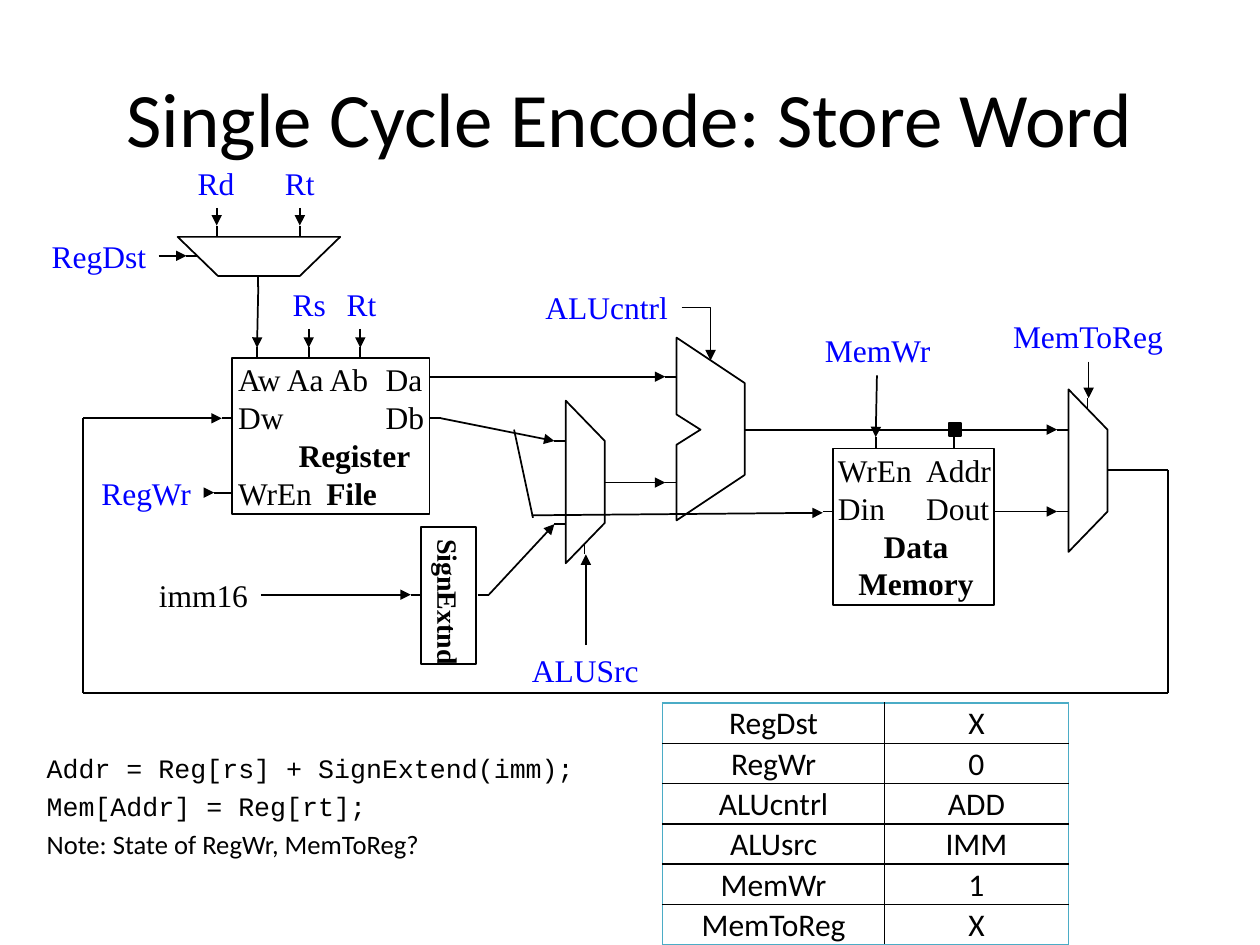
from dataclasses import dataclass
from itertools import pairwise

from pptx import Presentation
from pptx.dml.color import RGBColor
from pptx.enum.shapes import MSO_CONNECTOR, MSO_SHAPE
from pptx.enum.text import MSO_ANCHOR, MSO_AUTO_SIZE, PP_ALIGN
from pptx.oxml.ns import qn
from pptx.slide import Slide
from pptx.util import Cm, Pt
from lxml import etree

BLACK = RGBColor(0x00, 0x00, 0x00)
WHITE = RGBColor(0xFF, 0xFF, 0xFF)
BLUE = RGBColor(0x00, 0x00, 0xFF)
TEAL = RGBColor(0x4B, 0xAC, 0xC6)
SERIF, SANS, MONO = "Times New Roman", "Calibri", "Courier New"
CENTER, LEFT = PP_ALIGN.CENTER, PP_ALIGN.LEFT
MIDDLE, BOTTOM = MSO_ANCHOR.MIDDLE, MSO_ANCHOR.BOTTOM
RECT = MSO_SHAPE.RECTANGLE
STRAIGHT, ELBOW = MSO_CONNECTOR.STRAIGHT, MSO_CONNECTOR.ELBOW
UNIT = 2.54
PIN = 0.09


@dataclass
class Label:
    text: str
    x: float
    y: float
    wide: float
    color: RGBColor = BLUE


@dataclass
class Mux:
    x: float
    y: float
    upright: bool


@dataclass
class Line:
    text: str
    bold: bool = False
    tab: float = 0
    indent: float = 0
    align: PP_ALIGN = LEFT


@dataclass
class Box:
    x: float
    y: float
    wide: float
    high: float
    inset: float
    lines: list[Line]


@dataclass
class Wire:
    points: list[tuple[float, float]]
    tip: bool = True


LABELS = [
    Label("Rd", 1.47, 1.25, 0.49), Label("Rt", 2.16, 1.25, 0.44),
    Label("RegDst", 0.31, 1.83, 0.95), Label("Rs", 2.22, 2.21, 0.47),
    Label("Rt", 2.65, 2.21, 0.44), Label("ALUcntrl", 4.23, 2.24, 1.17),
    Label("MemWr", 6.44, 2.58, 1.05), Label("MemToReg", 7.93, 2.47, 1.41),
    Label("RegWr", 0.7, 3.71, 0.92), Label("ALUSrc", 4.12, 5.12, 1.05),
    Label("imm16", 1.16, 4.52, 0.91, BLACK),
]
MUXES = [Mux(4.49, 3.18, True), Mux(8.48, 3.09, True), Mux(1.41, 1.88, False)]
TAPER = [(0, 0), (0.32, 0.31), (0.97, 0.31), (1.29, 0)]
ALU = [(5.37, 2.68), (5.91, 3.04), (5.91, 3.77), (5.37, 4.13),
       (5.37, 3.53), (5.56, 3.41), (5.37, 3.29)]
BOXES = [
    Box(1.84, 2.84, 1.57, 1.24, 0.05, [
        Line("Aw Aa Ab\tDa", tab=1.17), Line("Dw\tDb", tab=1.17),
        Line("Register", bold=True, indent=0.48), Line("WrEn\t|File", tab=0.7)]),
    Box(6.61, 3.56, 1.28, 1.24, 0.04, [
        Line("WrEn\tAddr", tab=0.7), Line("Din\tDout", tab=0.7),
        Line("Data", bold=True, align=CENTER), Line("Memory", bold=True, align=CENTER)]),
]
ACROSS = [(5.91, 3.41), (5.28, 2.99), (5.28, 3.83), (4.8, 3.83), (4.4, 3.5),
          (4.4, 4.16), (8.79, 3.73), (8.39, 4.06), (8.39, 3.41), (1.48, 2.03),
          (3.26, 4.72), (3.79, 4.72), (7.89, 4.06), (6.53, 4.06), (1.76, 3.32),
          (3.41, 3.32), (3.41, 2.99)]
DOWN = [(4.64, 4.31), (8.63, 3.16), (2.05, 2.19), (2.38, 1.79), (1.72, 1.79),
        (6.95, 3.47), (7.57, 3.47), (2.04, 2.75), (2.45, 2.75), (2.86, 2.75)]
WIRES = [
    Wire([(8.88, 3.73), (9.27, 3.73), (9.27, 5.5), (0.66, 5.5), (0.66, 3.32), (1.76, 3.32)]),
    Wire([(3.88, 4.72), (4.4, 4.16)]), Wire([(4.89, 3.83), (5.28, 3.83)]),
    Wire([(2.07, 4.72), (3.26, 4.72)]), Wire([(3.5, 3.32), (4.4, 3.5)]),
    Wire([(6, 3.41), (7.53, 3.41)], False), Wire([(7.62, 3.41), (8.39, 3.41)]),
    Wire([(2.05, 2.27), (2.04, 2.76)]), Wire([(2.45, 2.61), (2.45, 2.76)]),
    Wire([(2.86, 2.61), (2.86, 2.76)]), Wire([(3.5, 2.99), (5.28, 2.99)]),
    Wire([(7.98, 4.06), (8.39, 4.06)]), Wire([(4.65, 5.12), (4.65, 4.4)]),
    Wire([(1.26, 2.03), (1.48, 2.03)]), Wire([(1.72, 1.65), (1.72, 1.79)]),
    Wire([(2.38, 1.65), (2.38, 1.79)]), Wire([(1.62, 3.91), (1.7, 3.91)]),
    Wire([(1.7, 3.91), (1.84, 3.91)], False), Wire([(6.96, 2.98), (6.95, 3.47)]),
    Wire([(8.64, 2.87), (8.64, 3.16)]), Wire([(4.08, 3.41), (4.23, 4.11)], False),
    Wire([(4.22, 4.09), (6.53, 4.07)]),
]
ROWS = [("RegDst", "X"), ("RegWr", "0"), ("ALUcntrl", "ADD"),
        ("ALUsrc", "IMM"), ("MemWr", "1"), ("MemToReg", "X")]
NOTES = [("Addr = Reg[rs] + SignExtend(imm);", MONO), ("Mem[Addr] = Reg[rt];", MONO),
         ("Note: State of RegWr, MemToReg?", SANS)]


def cm(size: float) -> Cm:
    return Cm(size * UNIT)


def write(para, text: str, *, font=SERIF, size=18.0, color=BLACK, bold=False, align=CENTER):
    para.alignment = align
    run = para.add_run()
    run.text = text
    run.font.name, run.font.size, run.font.bold = font, Pt(size), bold
    run.font.color.rgb = color


def place(shape, x: float, y: float, wide: float, high: float):
    shape.left, shape.top, shape.width, shape.height = map(cm, (x, y, wide, high))


def paint(shape, fill=WHITE):
    shape.shadow.inherit = False
    shape.fill.solid()
    shape.fill.fore_color.rgb = fill
    shape.line.color.rgb = BLACK
    shape.line.width = Pt(1)


def block(slide: Slide, x: float, y: float, wide: float, high: float, fill=WHITE):
    shape = slide.shapes.add_shape(RECT, *map(cm, (x, y, wide, high)))
    paint(shape, fill)
    return shape


def shell(slide: Slide, points: list[tuple[float, float]]):
    spots = [(cm(x), cm(y)) for x, y in points]
    form = slide.shapes.build_freeform(*spots[0])
    form.add_line_segments(spots[1:], close=True)
    paint(form.convert_to_shape())


def link(slide: Slide, start, end, tip=False, kind=STRAIGHT):
    wire = slide.shapes.add_connector(kind, *map(cm, (*start, *end)))
    wire.line.color.rgb = BLACK
    wire.line.width = Pt(1)
    prop = wire._element.spPr
    if tip:
        etree.SubElement(prop.find(qn("a:ln")), qn("a:tailEnd"), type="triangle")
    if kind == ELBOW:
        prop.find(qn("a:prstGeom")).set("prst", "bentConnector2")
    etree.SubElement(prop, qn("a:effectLst"))


def draw_box(slide: Slide, box: Box):
    frame = block(slide, box.x, box.y, box.wide, box.high).text_frame
    frame.word_wrap, frame.vertical_anchor = True, MIDDLE
    frame.margin_left = cm(box.inset)
    frame.margin_right = frame.margin_top = frame.margin_bottom = 0
    for num, line in enumerate(box.lines):
        para = frame.add_paragraph() if num else frame.paragraphs[0]
        for part, text in enumerate(line.text.split("|")):
            write(para, text, bold=line.bold or part > 0, align=line.align)
        prop = para._p.get_or_add_pPr()
        prop.set("marL", str(cm(line.indent)))
        if line.tab:
            tabs = etree.SubElement(prop, qn("a:tabLst"))
            etree.SubElement(tabs, qn("a:tab"), pos=str(cm(line.tab)), algn="l")


def draw_label(slide: Slide, label: Label):
    frame = slide.shapes.add_textbox(*map(cm, (label.x, label.y, label.wide, 0.4))).text_frame
    frame.word_wrap = False
    write(frame.paragraphs[0], label.text, color=label.color)


def draw_table(slide: Slide):
    table = slide.shapes.add_table(len(ROWS), 2, *map(cm, (5.26, 5.58, 3.22, 1.92))).table
    table.first_row = table.horz_banding = False
    table.columns[0].width, table.columns[1].width = cm(1.76), cm(1.46)
    for r, row in enumerate(ROWS):
        for c, text in enumerate(row):
            cell = table.cell(r, c)
            cell.margin_left = cell.margin_right = cell.margin_top = cm(0.01)
            cell.margin_bottom, cell.vertical_anchor = 0, BOTTOM
            write(cell.text_frame.paragraphs[0], text, font=SANS)
            outer = {"L": c == 0, "R": c == 1, "T": r == 0, "B": r == len(ROWS) - 1}
            for side, edge in outer.items():
                rule = etree.SubElement(cell._tc.get_or_add_tcPr(), qn(f"a:ln{side}"), w=str(Pt(1)))
                fill = etree.SubElement(rule, qn("a:solidFill"))
                etree.SubElement(fill, qn("a:srgbClr"), val=str(TEAL if edge else BLACK))
            cell.fill.solid()
            cell.fill.fore_color.rgb = WHITE


def draw_text(slide: Slide):
    title, body = slide.shapes.title, slide.placeholders[1]
    place(title, 0.5, 0.3, 9, 1.25)
    write(title.text_frame.paragraphs[0], "Single Cycle Encode: Store Word", font=SANS, size=44)
    place(body, 0.27, 5.92, 4.83, 0.83)
    frame = body.text_frame
    frame.auto_size = MSO_AUTO_SIZE.NONE
    for num, (text, font) in enumerate(NOTES):
        para = frame.add_paragraph() if num else frame.paragraphs[0]
        write(para, text, font=font, size=15.2, align=LEFT)
        para.space_before = Pt(3.5)
        prop = para._p.get_or_add_pPr()
        prop.set("marL", str(cm(0.38)))
        prop.set("indent", str(cm(-0.38)))
        etree.SubElement(prop, qn("a:buNone"))


def main():
    deck = Presentation()
    deck.slide_width, deck.slide_height = cm(10), cm(7.5)
    slide = deck.slides.add_slide(deck.slide_layouts[1])
    draw_text(slide)
    shell(slide, ALU)
    for mux in MUXES:
        shell(slide, [(mux.x + (b if mux.upright else a), mux.y + (a if mux.upright else b))
                      for a, b in TAPER])
    for box in BOXES:
        draw_box(slide, box)
    frame = block(slide, 3.34, 4.18, 0.44, 1.09).text_frame
    frame.word_wrap, frame.vertical_anchor = False, MIDDLE
    frame._txBody.bodyPr.set("vert", "eaVert")
    write(frame.paragraphs[0], "SignExtnd", size=16, bold=True)
    block(slide, 7.53, 3.36, 0.1, 0.1, BLACK)
    for x, y in ACROSS:
        link(slide, (x, y), (x + PIN, y))
    for x, y in DOWN:
        link(slide, (x, y), (x, y + PIN))
    for wire in WIRES:
        for start, end in pairwise(wire.points):
            link(slide, start, end, wire.tip and end == wire.points[-1])
    link(slide, (5.41, 2.44), (5.64, 2.86), True, ELBOW)
    for label in LABELS:
        draw_label(slide, label)
    draw_table(slide)
    deck.save("out.pptx")


if __name__ == "__main__":
    main()
